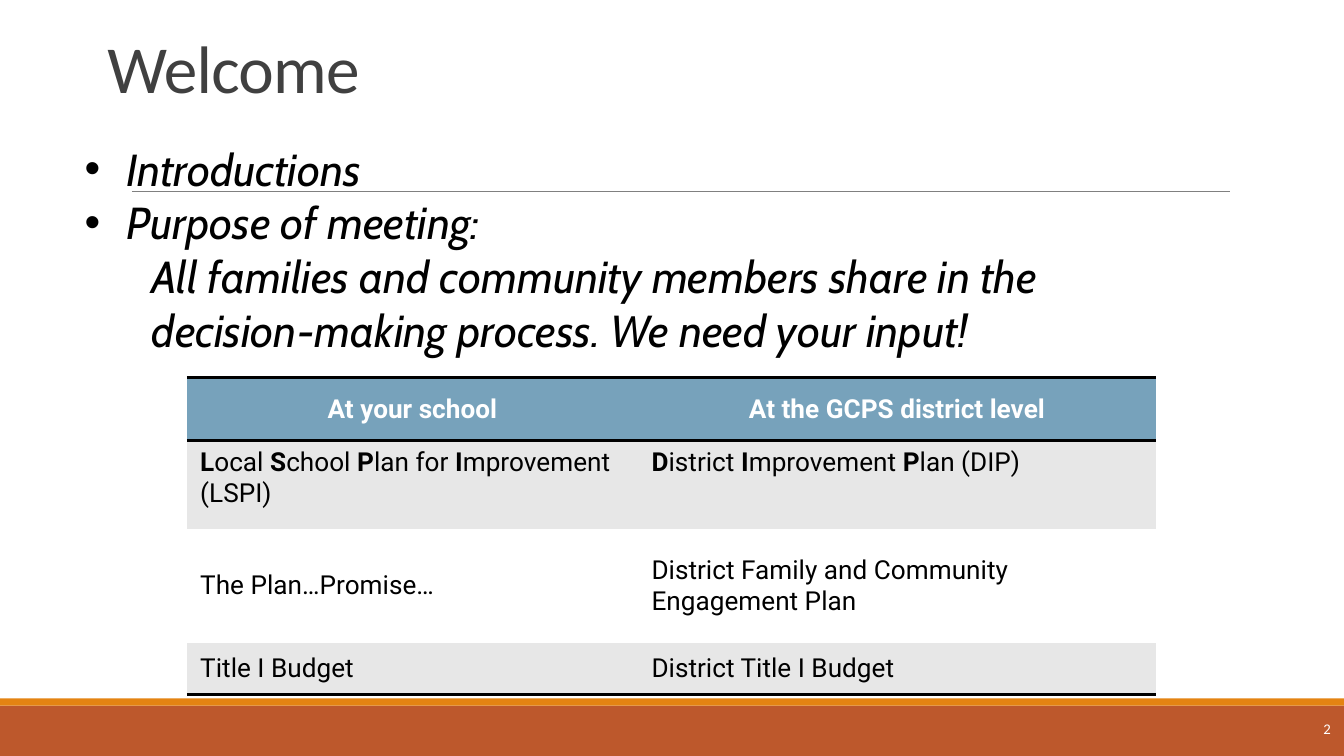
import dataclasses
import typing

import pptx
import pptx.dml.color
import pptx.enum.shapes
import pptx.enum.text
import pptx.oxml.ns
import pptx.util
from lxml import etree

Cm = pptx.util.Cm
Pt = pptx.util.Pt
qn = pptx.oxml.ns.qn
Align = pptx.enum.text.PP_ALIGN
Anchor = pptx.enum.text.MSO_ANCHOR

HUES = {
    "rust": "BD582C", "orange": "E48312", "rule": "808080", "title": "404040",
    "black": "000000", "white": "FFFFFF", "head": "77A2BB", "band": "E7E7E7",
}


@dataclasses.dataclass(frozen=True)
class Box:
    left: float
    top: float
    width: float
    height: float

    def cms(self) -> list:
        return [Cm(side) for side in dataclasses.astuple(self)]


@dataclasses.dataclass(frozen=True)
class Face:
    font: str
    size: float
    hue: str
    bold: bool = False
    slant: bool = False


@dataclasses.dataclass(frozen=True)
class Row:
    height: float
    texts: tuple
    fill: str
    edges: tuple = ()
    top: bool = False


TITLE = Face("Calibri", 36, "title")
NUMBER = Face("Calibri", 7.9, "white")
BODY = Face("Cabin", 24, "black", slant=True)
HEAD = Face("Roboto", 14, "white", bold=True)
CELL = Face("Roboto", 14, "black")

POINTS = (
    ("Introductions", True),
    ("Purpose of meeting:", True),
    ("All families and community members share in the "
     "decision-making process. We need your input!", False),
)
WIDTHS = (8.53, 9.79)
ROWS = (
    Row(1.19, ("At your school", "At the GCPS district level"), "head", ("T", "B")),
    Row(1.67, ("*L*ocal *S*chool *P*lan for *I*mprovement (LSPI)",
               "*D*istrict* I*mprovement* P*lan (DIP)"), "band", ("T",), True),
    Row(2.15, ("The Plan…Promise…",
               "District Family and Community Engagement Plan"), "white"),
    Row(0.98, ("Title I Budget", "District Title I Budget"), "band", ("B",)),
)


def tint(name: str) -> pptx.dml.color.RGBColor:
    return pptx.dml.color.RGBColor.from_string(HUES[name])


def write(par: typing.Any, text: str, face: Face) -> None:
    """Add runs to a paragraph; parts between asterisks are bold."""
    for spot, part in enumerate(text.split("*")):
        if part:
            run = par.add_run()
            run.text = part
            font = run.font
            font.name, font.size = face.font, Pt(face.size)
            font.bold = face.bold or spot % 2 == 1
            font.italic = face.slant
            font.color.rgb = tint(face.hue)


def add_text(slide: typing.Any, box: Box, inset: float = 0.13) -> typing.Any:
    frame = slide.shapes.add_textbox(*box.cms()).text_frame
    frame.word_wrap = True
    frame.margin_left = frame.margin_right = Cm(0.25)
    frame.margin_top = frame.margin_bottom = Cm(inset)
    return frame


def add_band(slide: typing.Any, box: Box, hue: str) -> None:
    shape = slide.shapes.add_shape(
        pptx.enum.shapes.MSO_SHAPE.RECTANGLE, *box.cms())
    shape.shadow.inherit = False
    shape.fill.solid()
    shape.fill.fore_color.rgb = tint(hue)
    shape.line.fill.background()


def add_rule(slide: typing.Any, left: float, right: float, top: float) -> None:
    line = slide.shapes.add_connector(
        pptx.enum.shapes.MSO_CONNECTOR.STRAIGHT,
        Cm(left), Cm(top), Cm(right), Cm(top))
    line.line.color.rgb = tint("rule")
    line.line.width = Pt(0.5)
    etree.SubElement(line._element.spPr, qn("a:effectLst"))


def add_title(slide: typing.Any) -> None:
    par = add_text(slide, Box(1.78, 0.48, 19.5, 2.08), 0.25).paragraphs[0]
    par.line_spacing = 0.85
    write(par, "Welcome", TITLE)
    par.runs[0].font._element.set("spc", "-40")


def add_points(slide: typing.Any) -> None:
    frame = add_text(slide, Box(1.35, 2.54, 19.5, 4.37))
    for spot, (text, dot) in enumerate(POINTS):
        par = frame.add_paragraph() if spot else frame.paragraphs[0]
        props = par._p.get_or_add_pPr()
        props.set("marL", str(Cm(0.79 if dot else 1.27)))
        props.set("indent", str(Cm(-0.79 if dot else 0)))
        if dot:
            etree.SubElement(props, qn("a:buFont"), typeface="Arial")
            etree.SubElement(props, qn("a:buChar"), char="•")
        else:
            par.level = 1
            etree.SubElement(props, qn("a:buNone"))
        write(par, text, BODY)


def set_edges(cell: typing.Any, edges: tuple) -> None:
    """Draw black lines on the named sides and clear the others."""
    props = cell._tc.get_or_add_tcPr()
    for side in "LRTB":
        line = etree.SubElement(props, qn("a:ln" + side), w=str(Pt(2)))
        if side in edges:
            fill = etree.SubElement(line, qn("a:solidFill"))
            etree.SubElement(fill, qn("a:srgbClr"), val=HUES["black"])
        else:
            etree.SubElement(line, qn("a:noFill"))


def add_plans(slide: typing.Any) -> None:
    box = Box(3.53, 7.14, sum(WIDTHS), sum(row.height for row in ROWS))
    table = slide.shapes.add_table(len(ROWS), len(WIDTHS), *box.cms()).table
    table.horz_banding = False
    for col, width in zip(table.columns, WIDTHS):
        col.width = Cm(width)
    for spot, row in enumerate(ROWS):
        table.rows[spot].height = Cm(row.height)
        for cell, text in zip(table.rows[spot].cells, row.texts):
            set_edges(cell, row.edges)
            cell.fill.solid()
            cell.fill.fore_color.rgb = tint(row.fill)
            cell.vertical_anchor = Anchor.TOP if row.top else Anchor.MIDDLE
            par = cell.text_frame.paragraphs[0]
            par.alignment = Align.LEFT if spot else Align.CENTER
            write(par, text, CELL if spot else HEAD)


def main() -> None:
    deck = pptx.Presentation()
    deck.slide_width, deck.slide_height = Cm(25.4), Cm(14.29)
    slide = deck.slides.add_slide(deck.slide_layouts[6])
    add_band(slide, Box(0, 13.34, 25.4, 0.95), "rust")
    add_band(slide, Box(0, 13.2, 25.4, 0.14), "orange")
    add_rule(slide, 2.49, 23.24, 3.62)
    add_title(slide)
    number = add_text(slide, Box(23.88, 13.44, 1.52, 0.84), 0.25).paragraphs[0]
    number.alignment = Align.RIGHT
    write(number, "2", NUMBER)
    add_points(slide)
    add_plans(slide)
    deck.save("out.pptx")


if __name__ == "__main__":
    main()
